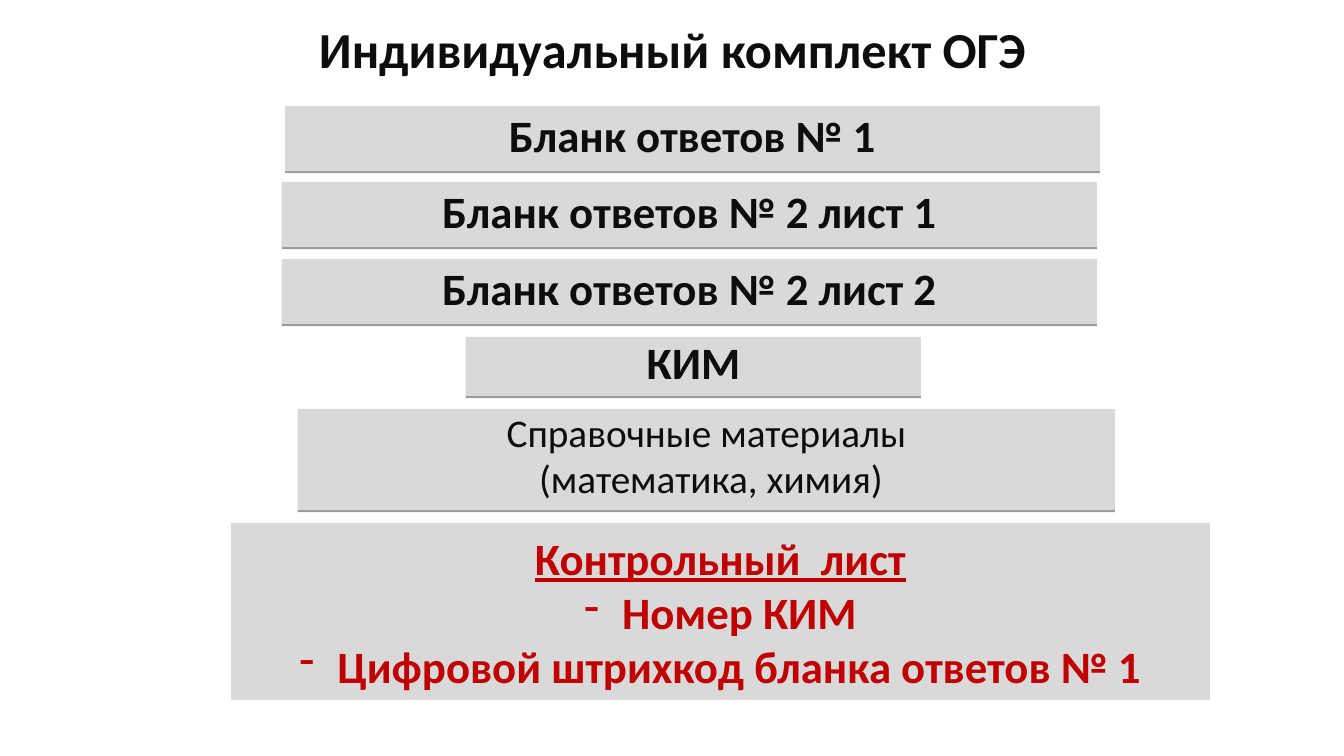
from lxml import etree
from pptx import Presentation
from pptx import util as u
from pptx.dml.color import RGBColor
from pptx.enum import shapes, text
from pptx.oxml import ns

EMU_PER_PX = 914400 / 100.8
INK = RGBColor(0x0D, 0x0D, 0x0D)
RED = RGBColor(0xC0, 0x00, 0x00)
GREY = RGBColor(0xD9, 0xD9, 0xD9)


def px(length):
    return u.Emu(round(length * EMU_PER_PX))


def add(parent, tag, **attributes):
    return etree.SubElement(parent, ns.qn(tag), attributes)


def apply(target, values):
    for name, value in values.items():
        setattr(target, name, value)


class KitSlide:
    font = {"name": "Calibri", "size": u.Pt(32), "bold": True}
    centred = {"alignment": text.PP_ALIGN.CENTER}
    middle = {"word_wrap": True, "vertical_anchor": text.MSO_ANCHOR.MIDDLE}
    growing = {
        "word_wrap": True,
        "vertical_anchor": text.MSO_ANCHOR.TOP,
        "auto_size": text.MSO_AUTO_SIZE.SHAPE_TO_FIT_TEXT,
        "margin_top": px(8),
        "margin_bottom": px(8),
    }

    def __init__(self, presentation):
        self.slide = presentation.slides.add_slide(presentation.slide_layouts[6])

    def fill_text(self, frame, lines, color, frame_format, font=None, spacing=None):
        apply(frame, frame_format)
        for index, line in enumerate(lines):
            paragraph = frame.paragraphs[0] if index == 0 else frame.add_paragraph()
            apply(paragraph, self.centred | (spacing or {}))
            run = paragraph.add_run()
            run.text = line
            apply(run.font, self.font | (font or {}))
            run.font.color.rgb = color

    def title(self, box, line):
        frame = self.slide.shapes.add_textbox(*map(px, box)).text_frame
        self.fill_text(frame, [line], INK, self.middle, {"size": u.Pt(36)})

    def panel(self, box):
        panel = self.slide.shapes.add_shape(shapes.MSO_SHAPE.RECTANGLE, *map(px, box))
        panel.fill.solid()
        panel.fill.fore_color.rgb = GREY
        panel.line.fill.background()
        panel.shadow.inherit = False
        return panel

    def band(self, box, lines, line_spacing=0.8, space_before=6, font=None):
        band = self.panel(box)
        effects = band._element.spPr.find(ns.qn("a:effectLst"))
        shadow = add(effects, "a:outerShdw", blurRad="0", dist="20320",
                     dir="5400000", rotWithShape="0")
        black = add(shadow, "a:srgbClr", val="000000")
        add(black, "a:alpha", val="38000")
        spacing = {"line_spacing": line_spacing, "space_before": u.Pt(space_before)}
        self.fill_text(band.text_frame, lines, INK, self.growing, font, spacing)

    def checklist(self, box, heading, items):
        frame = self.panel(box).text_frame
        self.fill_text(frame, [heading, *items], RED, self.middle)
        frame.paragraphs[0].runs[0].font.underline = True
        for item in frame.paragraphs[1:]:
            properties = item._p.get_or_add_pPr()
            properties.set("marL", str(px(38)))
            properties.set("indent", str(-px(38)))
            add(properties, "a:buFontTx")
            add(properties, "a:buChar", char="-")


def main():
    presentation = Presentation()
    apply(presentation, {"slide_width": px(1344), "slide_height": px(756)})
    kit = KitSlide(presentation)
    kit.title((260, 12, 825, 73), "Индивидуальный комплект ОГЭ")

    answer_sheets = [
        (285, "Бланк ответов № 1"),
        (282, "Бланк ответов № 2 лист 1"),
        (282, "Бланк ответов № 2 лист 2"),
    ]
    for row, (left, sheet) in enumerate(answer_sheets):
        kit.band((left, 106 + row * 153 // 2, 815, 65), [sheet], 0.9, 7)

    kit.band((466, 337, 455, 59), ["КИМ"])
    kit.band((298, 409, 817, 101), ["Справочные материалы", " (математика, химия)"],
             font={"size": u.Pt(28), "bold": False})
    kit.checklist((231, 523, 979, 177), "Контрольный  лист",
                  ["Номер КИМ", "Цифровой штрихкод бланка ответов № 1"])
    presentation.save("out.pptx")


if __name__ == "__main__":
    main()
